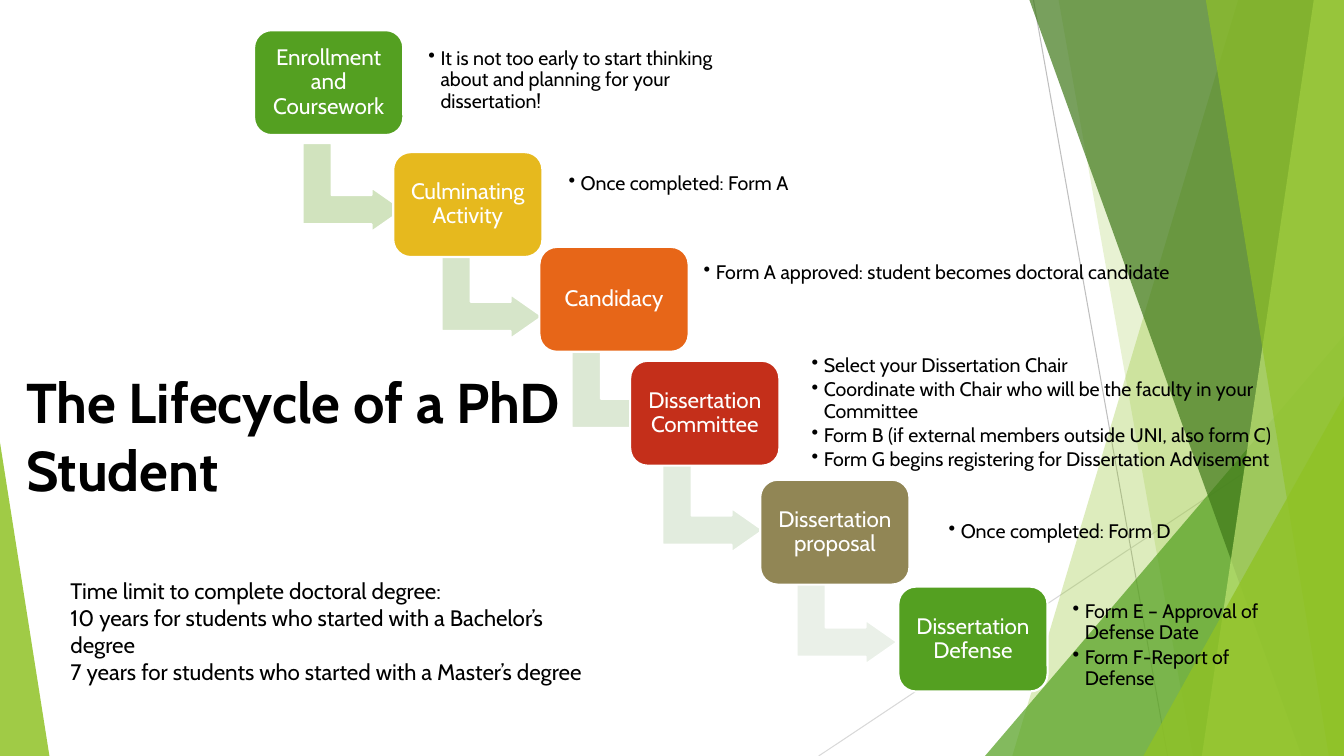
import pptx
import pptx.dml.color
import pptx.enum.shapes
import pptx.enum.text
import pptx.oxml
import pptx.oxml.ns
import pptx.util
from pptx.util import Inches

SHAPE = pptx.enum.shapes.MSO_SHAPE
ALIGN = pptx.enum.text.PP_ALIGN
ANCHOR = pptx.enum.text.MSO_ANCHOR
qn = pptx.oxml.ns.qn

COLOURS = {
    "lime": "90C226", "green": "54A021", "forest": "3F7819", "pale lime": "C0E474",
    "gold": "E6B91E", "orange": "E76618", "red": "C42F1A", "khaki": "918655",
    "white": "FFFFFF", "black": "000000", "grey": "BFBFBF", "light grey": "D9D9D9",
    "arrow 1": "D1E3BE", "arrow 2": "D6E5C9", "arrow 3": "DCE8D4",
    "arrow 4": "E2ECDE", "arrow 5": "EAF0E8",
}
WIDTH, HEIGHT = 13.33, 7.5


class SlideBuilder:
    font = "Cabin"
    step_size = (1.48, 1.04)
    arrow_size = (0.88, 1)

    def __init__(self, page):
        self.page = page

    def colour(self, name):
        return pptx.dml.color.RGBColor.from_string(COLOURS[name])

    def paint(self, shape, colour, opacity=100, outline=None):
        shape.shadow.inherit = False
        shape.fill.solid()
        shape.fill.fore_color.rgb = self.colour(colour)
        if opacity < 100:
            tint = shape.fill._xPr.find(qn("a:solidFill"))[0]
            tint.append(pptx.oxml.parse_xml(
                f'<a:alpha {pptx.oxml.ns.nsdecls("a")} val="{opacity * 1000}"/>'))
        if outline:
            shape.line.color.rgb = self.colour(outline)
            shape.line.width = pptx.util.Pt(1.5)
        else:
            shape.line.fill.background()

    def line(self, start, end, colour):
        line = self.page.shapes.add_connector(
            pptx.enum.shapes.MSO_CONNECTOR.STRAIGHT, *map(Inches, start + end))
        line.line.color.rgb = self.colour(colour)
        line.line.width = pptx.util.Pt(0.75)
        line._element.spPr.append(pptx.oxml.parse_xml(
            f'<a:effectLst {pptx.oxml.ns.nsdecls("a")}/>'))

    def shard(self, top_x, bottom_x, colour, opacity):
        """A band from a slanted left edge to the right edge of the slide."""
        outline = self.page.shapes.build_freeform(Inches(top_x), 0)
        corners = [(WIDTH, 0), (WIDTH, HEIGHT), (bottom_x, HEIGHT)]
        outline.add_line_segments([(Inches(x), Inches(y)) for x, y in corners])
        self.paint(outline.convert_to_shape(), colour, opacity)

    def triangle(self, place, apex, colour, opacity):
        shape = self.page.shapes.add_shape(SHAPE.ISOSCELES_TRIANGLE, *map(Inches, place))
        shape.adjustments[0] = apex
        self.paint(shape, colour, opacity)

    def arrow(self, left, top, colour):
        shape = self.page.shapes.add_shape(
            SHAPE.BENT_UP_ARROW, *map(Inches, (left, top) + self.arrow_size))
        shape.rotation = 90
        for index, value in enumerate((0.328, 0.25, 0.358)):
            shape.adjustments[index] = value
        self.paint(shape, colour, outline="white")

    def step(self, left, top, colour, text):
        shape = self.page.shapes.add_shape(
            SHAPE.ROUNDED_RECTANGLE, *map(Inches, (left, top) + self.step_size))
        self.paint(shape, colour, outline="white")
        self.fill_frame(shape.text_frame, [text], 16, "white", ANCHOR.MIDDLE, (0.07,) * 4)
        para = shape.text_frame.paragraphs[0]
        para.alignment = ALIGN.CENTER
        para.line_spacing = 0.9

    def text(self, place, lines, size, bold=False):
        box = self.page.shapes.add_textbox(*map(Inches, place))
        self.fill_frame(box.text_frame, lines, size, "black", bold=bold)

    def notes(self, place, lines, anchor=ANCHOR.MIDDLE, insets=(0.06,) * 4):
        box = self.page.shapes.add_textbox(*map(Inches, place))
        self.fill_frame(box.text_frame, lines, 14, "black", anchor, insets)
        for para in box.text_frame.paragraphs:
            para.line_spacing = 0.9
            para.space_after = pptx.util.Pt(2.1)
            properties = para._p.get_or_add_pPr()
            properties.set("marL", str(Inches(0.12)))
            properties.set("indent", str(Inches(-0.12)))
            properties.append(pptx.oxml.parse_xml(
                f'<a:buChar {pptx.oxml.ns.nsdecls("a")} char="•"/>'))

    def fill_frame(self, frame, lines, size, colour, anchor=ANCHOR.TOP,
                   insets=(0.1, 0.05, 0.1, 0.05), bold=False):
        frame.word_wrap = True
        frame.vertical_anchor = anchor
        (frame.margin_left, frame.margin_top,
         frame.margin_right, frame.margin_bottom) = map(Inches, insets)
        for index, line in enumerate(lines):
            para = frame.add_paragraph() if index else frame.paragraphs[0]
            para.alignment = ALIGN.LEFT
            span = para.add_run()
            span.text = line
            span.font.name = self.font
            span.font.size = pptx.util.Pt(size)
            span.font.bold = bold
            span.font.color.rgb = self.colour(colour)


def main():
    deck = pptx.Presentation()
    deck.slide_width, deck.slide_height = Inches(WIDTH), Inches(HEIGHT)
    slide = SlideBuilder(deck.slides.add_slide(deck.slide_layouts[6]))

    # Background facets
    slide.line((10.25, 0), (11.58, HEIGHT), "grey")
    slide.line((WIDTH, 4.03), (8.12, HEIGHT), "light grey")
    slide.shard(12.28, 10.04, "lime", 30)
    slide.shard(10.5, 11.83, "lime", 20)
    slide.triangle((9.77, 3.33, 3.56, 4.17), 1, "green", 72)
    slide.shard(10.21, 12.91, "forest", 70)
    slide.shard(13.03, 11.92, "pale lime", 70)
    slide.shard(11.96, 13.18, "lime", 65)
    slide.triangle((11.34, 3.93, 1.99, 3.57), 1, "lime", 80)
    slide.triangle((0, 4.39, 0.49, 3.11), 0, "lime", 85)

    # Staircase of steps, each with the arrow that leads on from it
    steps = [
        (2.52, 0.3, "green", "Enrollment and Coursework", (3.06, 1.36)),
        (3.9, 1.51, "gold", "Culminating Activity", (4.44, 2.42)),
        (5.35, 2.45, "orange", "Candidacy", (5.73, 3.38)),
        (6.25, 3.58, "red", "Dissertation Committee", (6.63, 4.54)),
        (7.54, 4.76, "khaki", "Dissertation proposal", (7.96, 5.65)),
        (8.91, 5.82, "green", "Dissertation Defense", None),
    ]
    for number, (left, top, colour, label, arrow_place) in enumerate(steps, 1):
        if arrow_place:
            slide.arrow(*arrow_place, f"arrow {number}")
        slide.step(left, top, colour, label)

    # Notes beside the steps
    raised = (0.06, 0.06, 0.06, 0.3)
    slide.notes((4.19, 0.5, 3.16, 0.84), [
        "It is not too early to start thinking about and planning for your dissertation!",
    ], insets=raised)
    slide.notes((5.58, 1.53, 3.16, 0.84), ["Once completed: Form A"], insets=raised)
    slide.notes((6.92, 2.29, 5.26, 0.84),
                ["Form A approved: student becomes doctoral candidate"])
    slide.notes((7.99, 3.47, 5.18, 1.26), [
        "Select your Dissertation Chair",
        "Coordinate with Chair who will be the faculty in your Committee",
        "Form B (if external members outside UNI, also form C)",
        "Form G begins registering for Dissertation Advisement",
    ])
    slide.notes((9.35, 4.98, 3.16, 0.84), ["Once completed: Form D"], insets=raised)
    slide.notes((10.54, 5.68, 2.39, 1.02), [
        "Form E – Approval of Defense Date",
        "Form F-Report of Defense",
    ], ANCHOR.TOP, (0.1, 0.29, 0.1, 0.05))

    # Time limit and title
    slide.text((0.6, 5.68, 5.4, 0.91), [
        "Time limit to complete doctoral degree:",
        "10 years for students who started with a Bachelor’s degree",
        "7 years for students who started with a Master’s degree",
    ], 16)
    slide.text((0.16, 3.6, 5.89, 1.45), ["The Lifecycle of a PhD Student"], 40, bold=True)

    deck.save("out.pptx")


if __name__ == "__main__":
    main()
